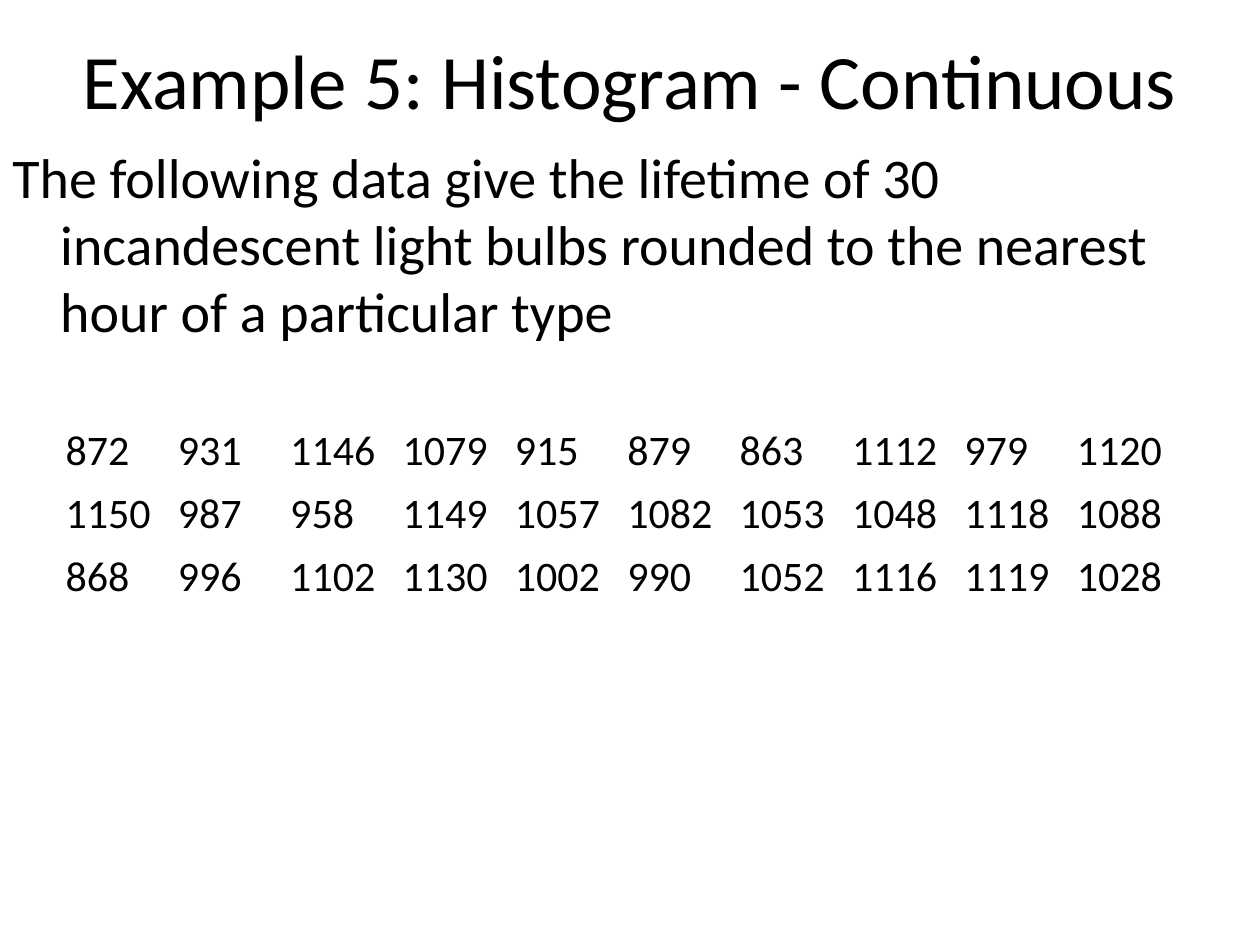
from lxml import etree
from pptx import Presentation
from pptx.dml.color import RGBColor
from pptx.enum.text import MSO_ANCHOR, PP_ALIGN
from pptx.oxml.ns import qn
from pptx.util import Inches, Pt

CENTER = PP_ALIGN.CENTER
LEFT = PP_ALIGN.LEFT
MIDDLE = MSO_ANCHOR.MIDDLE
TOP = MSO_ANCHOR.TOP
TITLE_ONLY = 5

LIFETIMES = [
    [872, 931, 1146, 1079, 915, 879, 863, 1112, 979, 1120],
    [1150, 987, 958, 1149, 1057, 1082, 1053, 1048, 1118, 1088],
    [868, 996, 1102, 1130, 1002, 990, 1052, 1116, 1119, 1028],
]


def color(value):
    return RGBColor.from_string(value)


class SlideBuilder:
    font = "Calibri"
    ink = "000000"
    paper = "FFFFFF"

    def __init__(self, deck):
        self.page = deck.slides.add_slide(deck.slide_layouts[TITLE_ONLY])
        fill = self.page.background.fill
        fill.solid()
        fill.fore_color.rgb = color(self.paper)

    def add_text(self, para, text, size, align=LEFT):
        para.alignment = align
        span = para.add_run()
        span.text = text
        span.font.name = self.font
        span.font.size = Pt(size)
        span.font.color.rgb = color(self.ink)

    def title(self, text, left, top, width, height):
        box = self.page.shapes.title
        box.left, box.top = Inches(left), Inches(top)
        box.width, box.height = Inches(width), Inches(height)
        box.text_frame.vertical_anchor = MIDDLE
        self.add_text(box.text_frame.paragraphs[0], text, 44, CENTER)

    def body(self, text, left, top, width, height, hanging):
        box = self.page.shapes.add_textbox(
            Inches(left), Inches(top), Inches(width), Inches(height))
        frame = box.text_frame
        frame.word_wrap = True
        frame.vertical_anchor = TOP
        para = frame.paragraphs[0]
        para.space_before = Pt(6.4)
        props = para._p.get_or_add_pPr()
        props.set("marL", str(Inches(hanging)))
        props.set("indent", str(-Inches(hanging)))
        self.add_text(para, text, 32)

    def borders(self, cell):
        props = cell._tc.get_or_add_tcPr()
        for position, side in enumerate(("lnL", "lnR", "lnT", "lnB")):
            line = etree.Element(qn("a:" + side), w=str(Pt(1)))
            fill = etree.SubElement(line, qn("a:solidFill"))
            etree.SubElement(fill, qn("a:srgbClr"), val=self.paper)
            props.insert(position, line)

    def table(self, rows, left, top, width, height):
        frame = self.page.shapes.add_table(
            len(rows), len(rows[0]),
            Inches(left), Inches(top), Inches(width), Inches(height))
        grid = frame.table
        grid.first_row = False
        grid.horz_banding = False
        for row, values in enumerate(rows):
            for column, value in enumerate(values):
                cell = grid.cell(row, column)
                cell.fill.background()
                self.borders(cell)
                self.add_text(cell.text_frame.paragraphs[0], str(value), 24)


def main():
    deck = Presentation()
    deck.slide_width, deck.slide_height = Inches(10), Inches(7.5)
    slide = SlideBuilder(deck)

    # Heading and problem statement
    slide.title("Example 5: Histogram - Continuous", 0.5, 0, 9, 1.25)
    slide.body("The following data give the lifetime of 30 incandescent light "
               "bulbs rounded to the nearest hour of a particular type",
               0, 1.08, 9.67, 5.92, hanging=0.38)

    # Bulb lifetimes in hours
    slide.table(LIFETIMES, 0.42, 3.33, 8.92, 1.5)

    deck.save("out.pptx")


if __name__ == "__main__":
    main()
